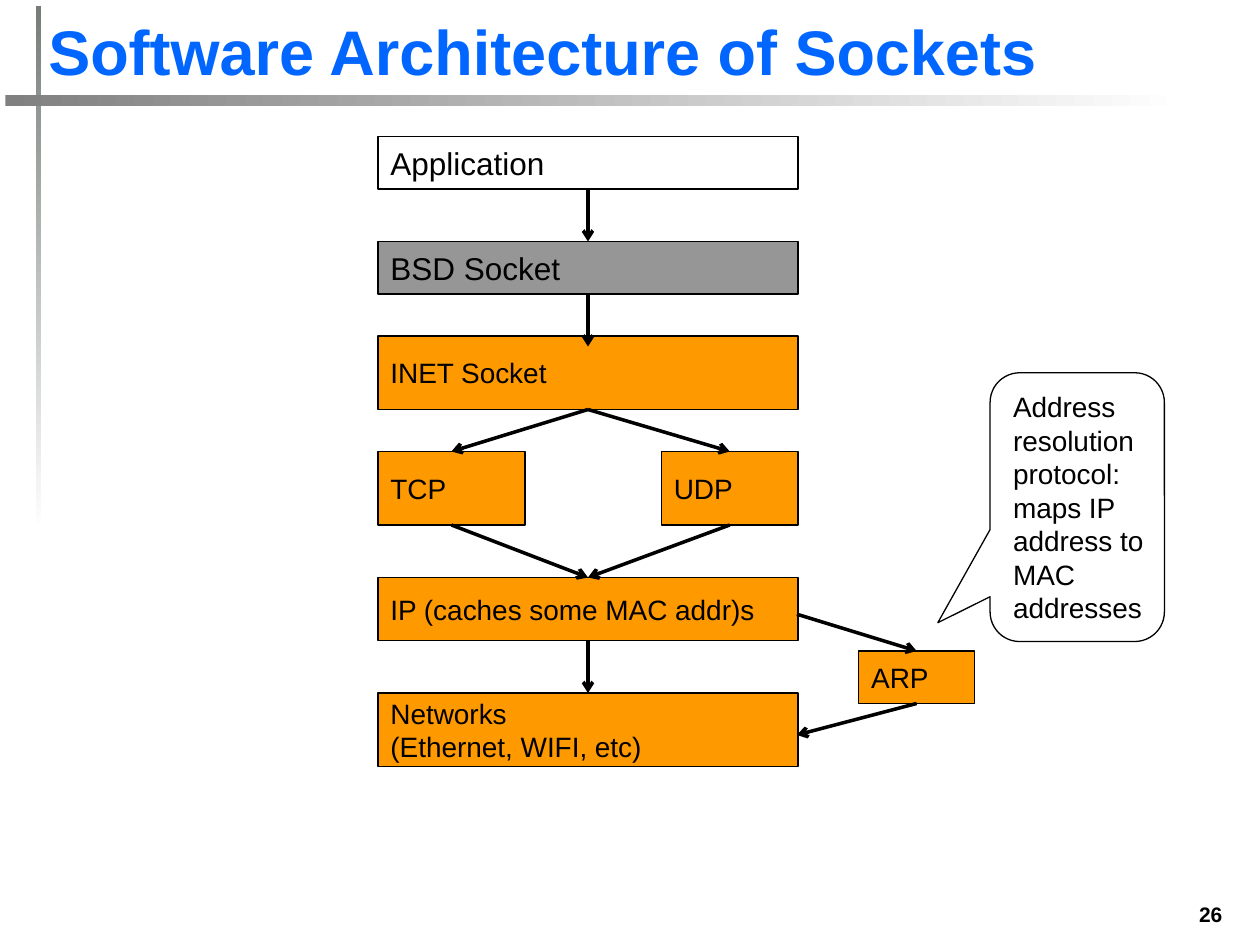
from lxml import etree
from pptx import Presentation
from pptx.dml.color import RGBColor
from pptx.enum.shapes import MSO_CONNECTOR, MSO_SHAPE
from pptx.enum.text import MSO_ANCHOR, PP_ALIGN
from pptx.oxml.ns import qn
from pptx.util import Pt

PX = 7620
RECT = MSO_SHAPE.RECTANGLE
BUBBLE = MSO_SHAPE.ROUNDED_RECTANGULAR_CALLOUT
LINE = MSO_CONNECTOR.STRAIGHT
LEFT, RIGHT = PP_ALIGN.LEFT, PP_ALIGN.RIGHT
TOP, MIDDLE, BOTTOM = MSO_ANCHOR.TOP, MSO_ANCHOR.MIDDLE, MSO_ANCHOR.BOTTOM
HUES = {
    "title": "0066FF", "ink": "000000", "white": "FFFFFF", "gray": "969696",
    "orange": "FF9900", "post": "767D79", "rule": "808080",
}


def hue(name):
    return RGBColor.from_string(HUES[name])


def emu(*vals):
    return [round(v * PX) for v in vals]


def write(shape, lines, size, color="ink", bold=False, align=LEFT, anchor=TOP):
    frame = shape.text_frame
    frame.word_wrap = True
    frame.vertical_anchor = anchor
    para = frame.paragraphs[0]
    para.alignment = align
    for i, line in enumerate(lines):
        if i:
            para.add_line_break()
        run = para.add_run()
        run.text = line
        font = run.font
        font.name, font.size, font.bold = "Arial", Pt(size), bold
        font.color.rgb = hue(color)


def outline(shape):
    shape.shadow.inherit = False
    shape.line.color.rgb = hue("ink")
    shape.line.width = Pt(0.75)


def block(slide, box, lines, size=16, fill="orange"):
    shape = slide.shapes.add_shape(RECT, *emu(*box))
    outline(shape)
    shape.fill.solid()
    shape.fill.fore_color.rgb = hue(fill)
    write(shape, lines, size, anchor=MIDDLE)


def arrow(slide, start, end):
    link = slide.shapes.add_connector(LINE, *emu(*start, *end))
    link.line.color.rgb = hue("ink")
    link.line.width = Pt(2)
    etree.SubElement(link.line._get_or_add_ln(), qn("a:tailEnd"), type="arrow")
    etree.SubElement(link._element.spPr, qn("a:effectLst"))


def fade(slide, box, color, angle):
    bar = slide.shapes.add_shape(RECT, *emu(*box))
    bar.shadow.inherit = False
    bar.line.fill.background()
    bar.fill.gradient()
    bar.fill.gradient_angle = angle
    for stop, name, pos in zip(bar.fill.gradient_stops, (color, "white"), (0, 1)):
        stop.color.rgb = hue(name)
        stop.position = pos


def header(slide, box):
    x, y, w, h = box
    fade(slide, (x, y + 1, 5, 500), "post", 270)
    fade(slide, (x - 29, y + 86, 1124, 10), "rule", 0)
    title = slide.shapes.title
    title.left, title.top, title.width, title.height = emu(*box)
    write(title, ["Software Architecture of Sockets"], 36, "title", True, LEFT, BOTTOM)


def stack(slide, box):
    x, y, w, h = box
    mid, edge = x + w // 2, x + w
    app = (x, y, w, 50)
    bsd = (x, y + 100, w, 50)
    inet = (x, y + 190, w, 70)
    tcp = (x, y + 300, 140, 70)
    udp = (edge - 130, y + 300, 130, 70)
    ip = (x, y + 420, w, 60)
    net = (x, y + 530, w, 70)
    arp = (edge + 58, y + 490, 110, 50)

    block(slide, app, ["Application"], 18, "white")
    block(slide, bsd, ["BSD Socket"], 18, "gray")
    block(slide, inet, ["INET Socket"])
    block(slide, tcp, ["TCP"])
    block(slide, udp, ["UDP"])
    block(slide, ip, ["IP (caches some MAC addr)s"])
    block(slide, net, ["Networks", "(Ethernet, WIFI, etc)"])
    block(slide, arp, ["ARP"])

    def head(part):
        return part[0] + part[2] // 2, part[1]

    def foot(part):
        return part[0] + part[2] // 2, part[1] + part[3]

    pairs = [(app, bsd), (inet, tcp), (inet, udp), (tcp, ip), (udp, ip), (ip, net)]
    for upper, lower in pairs:
        arrow(slide, foot(upper), head(lower))
    arrow(slide, foot(bsd), (mid, inet[1] + 10))
    arrow(slide, (edge - 1, ip[1] + 35), head(arp))
    arrow(slide, foot(arp), (edge - 1, net[1] + 40))


def note(slide, box):
    x, y, w, h = box
    shape = slide.shapes.add_shape(BUBBLE, *emu(*box))
    outline(shape)
    shape.fill.background()
    for i, val in enumerate((-0.8, 0.43, 0.17)):
        shape.adjustments[i] = val
    label = slide.shapes.add_textbox(*emu(x + 10, y + 10, w - 10, h - 17))
    text = "Address resolution protocol: maps IP address to MAC addresses"
    write(label, [text], 16)


def number(slide, box):
    label = slide.shapes.add_textbox(*emu(*box))
    write(label, ["26"], 12, bold=True, align=RIGHT)


def main():
    deck = Presentation()
    deck.slide_width, deck.slide_height = emu(1200, 900)
    slide = deck.slides.add_slide(deck.slide_layouts[5])
    header(slide, (34, 5, 1082, 85))
    stack(slide, (360, 130, 400, 600))
    note(slide, (943, 355, 166, 256))
    number(slide, (1100, 853, 76, 36))
    deck.save("out.pptx")


if __name__ == "__main__":
    main()
